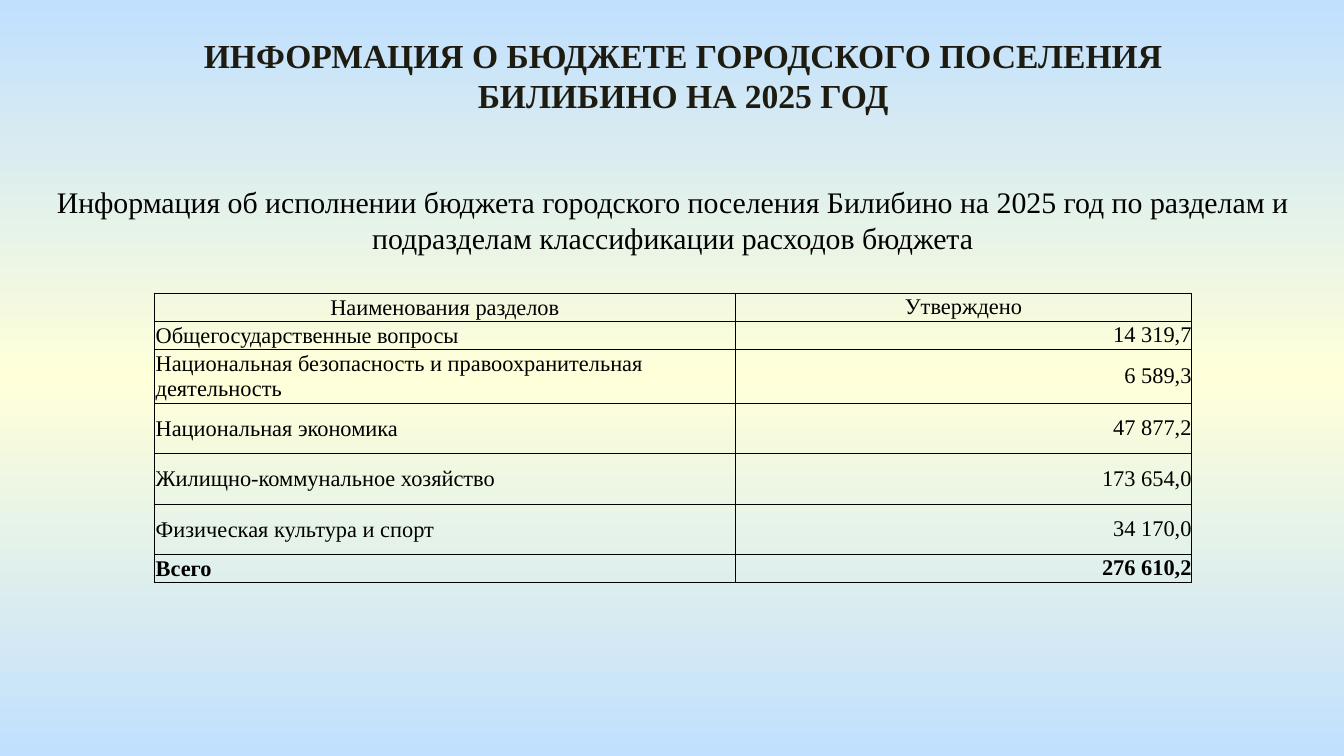
from dataclasses import dataclass

from lxml import etree
from pptx import Presentation
from pptx.dml.color import RGBColor
from pptx.enum.text import MSO_ANCHOR, MSO_AUTO_SIZE, PP_ALIGN
from pptx.oxml.ns import qn
from pptx.util import Pt

LEFT, CENTER, RIGHT = PP_ALIGN.LEFT, PP_ALIGN.CENTER, PP_ALIGN.RIGHT
TOP, MIDDLE = MSO_ANCHOR.TOP, MSO_ANCHOR.MIDDLE
NO_AUTO_SIZE = MSO_AUTO_SIZE.NONE

FONT = "Times New Roman"
COLORS = {
    "sky": "C1E0FF",
    "cream": "FFFFD9",
    "title": "1E1C11",
    "text": "000000",
    "border": "000000",
}
COLUMN_WIDTHS = (311.2, 244.4)
BORDER_WIDTH = 0.5


@dataclass
class BudgetRow:
    name: str
    amount: str
    height: float
    name_align: PP_ALIGN = LEFT
    amount_align: PP_ALIGN = RIGHT
    bold: bool = False


BUDGET_ROWS = [
    BudgetRow("Наименования разделов", "Утверждено", 15, CENTER, CENTER),
    BudgetRow("Общегосударственные вопросы", "14 319,7", 15),
    BudgetRow("Национальная безопасность и правоохранительная деятельность", "6 589,3", 29),
    BudgetRow("Национальная экономика", "47 877,2", 27),
    BudgetRow("Жилищно-коммунальное хозяйство", "173 654,0", 27),
    BudgetRow("Физическая культура и спорт", "34 170,0", 27),
    BudgetRow("Всего", "276 610,2", 15, bold=True),
]


def write_text(text_frame, text: str, *, size: float, color: str = "text",
               bold: bool = False, align: PP_ALIGN = CENTER) -> None:
    paragraph = text_frame.paragraphs[0]
    paragraph.alignment = align
    paragraph.space_before = Pt(0)
    run = paragraph.add_run()
    run.text = text
    run.font.name = FONT
    run.font.size = Pt(size)
    run.font.bold = bold
    run.font.color.rgb = RGBColor.from_string(COLORS[color])


def place(shape, left: float, top: float, width: float, height: float) -> None:
    shape.left, shape.top = Pt(left), Pt(top)
    shape.width, shape.height = Pt(width), Pt(height)
    text_frame = shape.text_frame
    text_frame.word_wrap = True
    text_frame.auto_size = NO_AUTO_SIZE
    text_frame.vertical_anchor = TOP


def add_color(parent, color: str) -> None:
    etree.SubElement(parent, qn("a:srgbClr"), val=COLORS[color])


def set_background(slide) -> None:
    fill = slide.background.fill
    fill.gradient()
    fill.gradient_angle = 90
    stops = next(slide.element.iter(qn("a:gsLst")))
    for stop in list(stops):
        stops.remove(stop)
    for percent, color in ((0, "sky"), (50, "cream"), (100, "sky")):
        add_color(etree.SubElement(stops, qn("a:gs"), pos=str(percent * 1000)), color)


def format_cell(cell, text: str, *, align: PP_ALIGN, bold: bool, inset: float) -> None:
    cell.margin_left = cell.margin_right = cell.margin_top = Pt(inset)
    cell.margin_bottom = Pt(0)
    cell.vertical_anchor = MIDDLE
    write_text(cell.text_frame, text, size=12, bold=bold, align=align)
    # Borders come before the fill in the cell properties
    properties = cell._tc.get_or_add_tcPr()
    for side in ("L", "R", "T", "B"):
        line = etree.SubElement(properties, qn(f"a:ln{side}"), w=str(Pt(BORDER_WIDTH)))
        add_color(etree.SubElement(line, qn("a:solidFill")), "border")
    cell.fill.background()


def add_budget_table(slide, left: float, top: float) -> None:
    height = sum(row.height for row in BUDGET_ROWS)
    table = slide.shapes.add_table(
        len(BUDGET_ROWS), len(COLUMN_WIDTHS),
        Pt(left), Pt(top), Pt(sum(COLUMN_WIDTHS)), Pt(height),
    ).table
    table.first_row = table.horz_banding = False
    for column, width in zip(table.columns, COLUMN_WIDTHS):
        column.width = Pt(width)
    for index, row in enumerate(BUDGET_ROWS):
        table.rows[index].height = Pt(row.height)
        format_cell(table.cell(index, 0), row.name,
                    align=row.name_align, bold=row.bold, inset=0.6)
        format_cell(table.cell(index, 1), row.amount,
                    align=row.amount_align, bold=row.bold, inset=0)


def main() -> None:
    presentation = Presentation()
    presentation.slide_width, presentation.slide_height = Pt(720), Pt(405)
    slide = presentation.slides.add_slide(presentation.slide_layouts[0])
    set_background(slide)

    # Title and subtitle
    title, subtitle = slide.placeholders
    place(title, 87.8, 15.2, 556.6, 51)
    write_text(title.text_frame,
               "ИНФОРМАЦИЯ О БЮДЖЕТЕ ГОРОДСКОГО ПОСЕЛЕНИЯ БИЛИБИНО НА 2025 ГОД",
               size=18, color="title", bold=True)
    place(subtitle, 0.5, 95, 720, 46)
    write_text(subtitle.text_frame,
               "Информация об исполнении бюджета городского поселения Билибино на 2025 год "
               "по разделам и подразделам классификации расходов бюджета",
               size=16)

    # Expenditure by section
    add_budget_table(slide, 82.8, 157)
    presentation.save("out.pptx")


if __name__ == "__main__":
    main()
